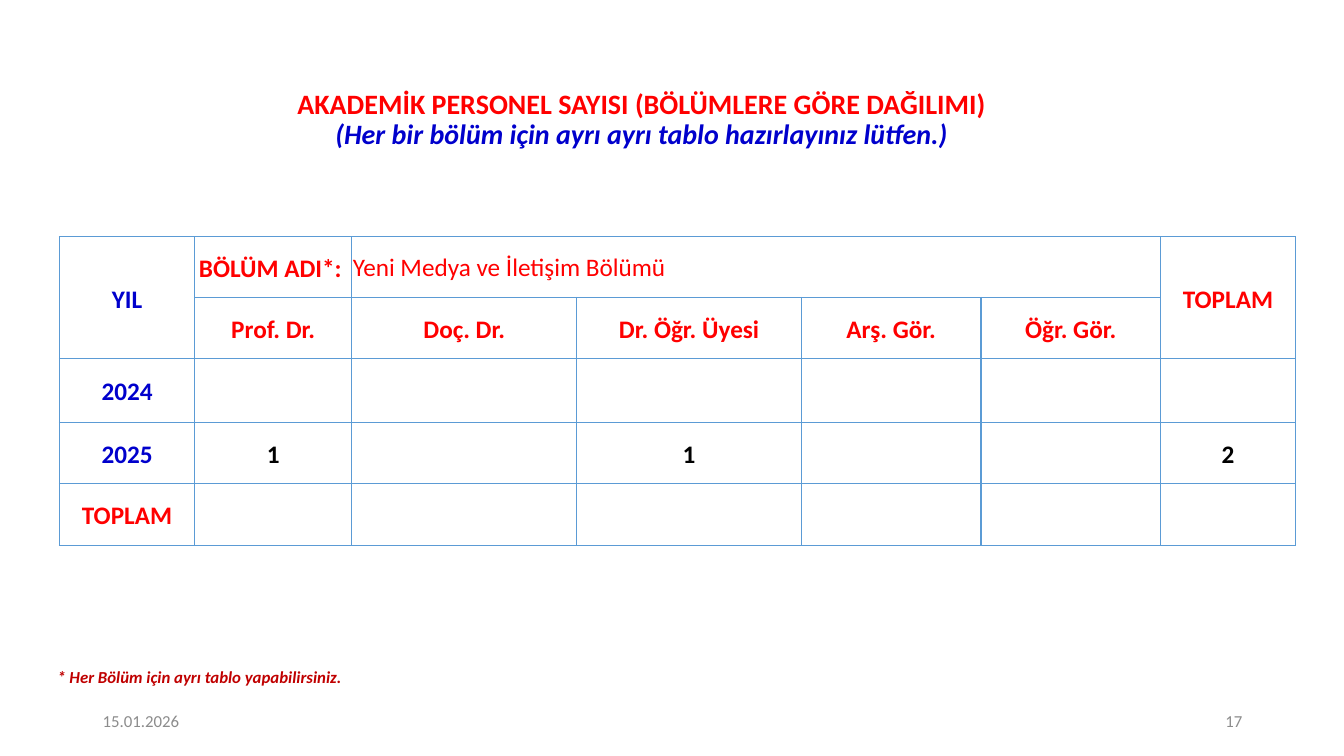
import pptx
import pptx.util
import pptx.dml.color
import pptx.enum.text
import pptx.oxml
import pptx.oxml.ns

PX = 9144  # 100 px to the inch
RED, BLUE, BLACK, GREY, DARK_RED = "FF0000", "0000CC", "000000", "8C8C8C", "C00000"
BORDER = "5B9BD5"
LEFT, CENTER, RIGHT = (pptx.enum.text.PP_ALIGN.LEFT, pptx.enum.text.PP_ALIGN.CENTER,
                       pptx.enum.text.PP_ALIGN.RIGHT)
MIDDLE, TOP = pptx.enum.text.MSO_ANCHOR.MIDDLE, pptx.enum.text.MSO_ANCHOR.TOP


def color(value):
    return pptx.dml.color.RGBColor.from_string(value)


def add_run(paragraph, text, size, ink, bold=False, italic=False):
    run = paragraph.add_run()
    run.text = text
    run.font.name = "Calibri"
    run.font.size = pptx.util.Pt(size)
    run.font.bold = bold
    run.font.italic = italic
    run.font.color.rgb = color(ink)


presentation = pptx.Presentation()
presentation.slide_width = 1333 * PX
presentation.slide_height = 750 * PX
slide = presentation.slides.add_slide(presentation.slide_layouts[5])

# Title
title = slide.shapes.title
title.left, title.top, title.width, title.height = (n * PX for n in (71, 70, 1131, 99))
title.text_frame.auto_size = pptx.enum.text.MSO_AUTO_SIZE.NONE
title.text_frame.vertical_anchor = MIDDLE
paragraph = title.text_frame.paragraphs[0]
paragraph.alignment = CENTER
paragraph.line_spacing = 0.9
add_run(paragraph, "AKADEMİK PERSONEL SAYISI (BÖLÜMLERE GÖRE DAĞILIMI)", 20, RED, bold=True)
paragraph.add_line_break()
add_run(paragraph, "(Her bir bölüm için ayrı ayrı tablo hazırlayınız lütfen.)", 20, BLUE,
        bold=True, italic=True)

# Staff table
column_widths = [134, 156, 223, 223, 178, 178, 134]
row_heights = [60, 61, 63, 61, 61]
rows = [
    ["YIL", "BÖLÜM ADI*: ", "Yeni Medya ve İletişim Bölümü", "", "", "", "TOPLAM"],
    ["", "Prof. Dr.", "Doç. Dr.", "Dr. Öğr. Üyesi", "Arş. Gör.", "Öğr. Gör.", ""],
    ["2024", "", "", "", "", "", ""],
    ["2025", "1", "", "1", "", "", "2"],
    ["TOPLAM", "", "", "", "", "", ""],
]
table = slide.shapes.add_table(len(rows), len(column_widths), 59 * PX, 235 * PX,
                               sum(column_widths) * PX, sum(row_heights) * PX).table
table.first_row = False
table.horz_banding = False
for column, width in zip(table.columns, column_widths):
    column.width = width * PX
for row, height in zip(table.rows, row_heights):
    row.height = height * PX

for row_index, texts in enumerate(rows):
    for column_index, text in enumerate(texts):
        cell = table.cell(row_index, column_index)
        cell_properties = cell._tc.get_or_add_tcPr()
        for side in ("lnL", "lnR", "lnT", "lnB"):
            cell_properties.append(pptx.oxml.parse_xml(
                f'<a:{side} {pptx.oxml.ns.nsdecls("a")} w="12700"><a:solidFill>'
                f'<a:srgbClr val="{BORDER}"/></a:solidFill></a:{side}>'))
        cell.fill.background()
        if not text:
            continue
        cell.margin_left = cell.margin_right = cell.margin_top = PX
        cell.margin_bottom = 0
        cell.vertical_anchor = MIDDLE
        is_department = (row_index, column_index) == (0, 2)
        if text == "YIL" or text.startswith("20"):
            ink = BLUE
        else:
            ink = BLACK if text.isdigit() else RED
        paragraph = cell.text_frame.paragraphs[0]
        paragraph.alignment = LEFT if is_department else CENTER
        paragraph.line_spacing = 1 if is_department else 1.07
        add_run(paragraph, text, 18, ink, bold=not is_department)

table.cell(0, 0).merge(table.cell(1, 0))
table.cell(0, 2).merge(table.cell(0, 5))
table.cell(0, 6).merge(table.cell(1, 6))

# Date, slide number and footnote
small_texts = [
    ("15.01.2026", (92, 695, 300, 40), MIDDLE, LEFT, GREY, False),
    ("17", (942, 695, 300, 40), MIDDLE, RIGHT, GREY, False),
    ("* Her Bölüm için ayrı tablo yapabilirsiniz.", (47, 657, 848, 30), TOP, LEFT, DARK_RED, True),
]
for text, box, anchor, alignment, ink, emphasis in small_texts:
    text_frame = slide.shapes.add_textbox(*(n * PX for n in box)).text_frame
    text_frame.word_wrap = True
    text_frame.vertical_anchor = anchor
    paragraph = text_frame.paragraphs[0]
    paragraph.alignment = alignment
    add_run(paragraph, text, 12, ink, bold=emphasis, italic=emphasis)

presentation.save("out.pptx")
